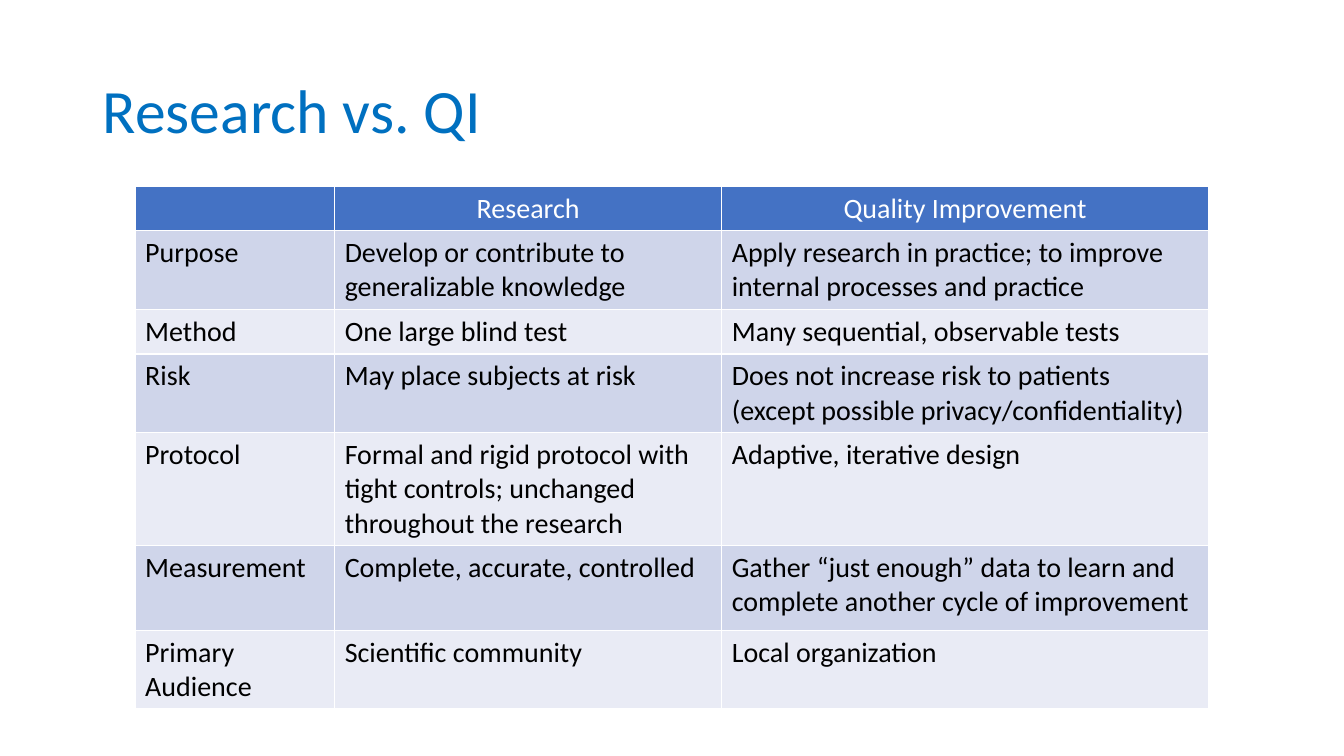
from dataclasses import dataclass

from pptx import Presentation
from pptx.dml.color import RGBColor
from pptx.enum.text import MSO_ANCHOR, MSO_AUTO_SIZE, PP_ALIGN
from pptx.slide import Slide
from pptx.table import _Cell
from pptx.text.text import TextFrame
from pptx.util import Inches, Pt

SLIDE_WIDTH = Inches(13.333)
SLIDE_HEIGHT = Inches(7.5)


@dataclass(frozen=True)
class Theme:
    font: str = "Calibri"
    title_size: int = 44
    table_size: int = 20
    title: str = "0070C0"
    header_fill: str = "4472C4"
    header_text: str = "FFFFFF"
    body_text: str = "000000"
    bands: tuple[str, str] = ("CFD5EA", "E9EBF5")


@dataclass(frozen=True)
class Box:
    """A place on the slide, in inches."""
    left: float
    top: float
    width: float
    height: float


@dataclass(frozen=True)
class Comparison:
    """One table row; lines is the number of text lines it holds."""
    topic: str
    research: str
    improvement: str
    lines: int = 1
    extra_height: float = 0

    @property
    def height(self) -> float:
        return CELL_PADDING + self.lines * LINE_HEIGHT + self.extra_height


THEME = Theme()
TITLE_BOX = Box(0.92, 0.4, 11.5, 1.45)
TABLE_LEFT, TABLE_TOP = 1.34, 1.85
COLUMN_WIDTHS = (1.98, 3.84, 4.83)
CELL_PADDING, LINE_HEIGHT = 0.1, 0.34

ROWS = (
    Comparison("", "Research", "Quality Improvement"),
    Comparison("Purpose", "Develop or contribute to generalizable knowledge",
               "Apply research in practice; to improve internal processes and practice", 2),
    Comparison("Method", "One large blind test", "Many sequential, observable tests"),
    Comparison("Risk", "May place subjects at risk",
               "Does not increase risk to patients (except possible privacy/confidentiality)", 2),
    Comparison("Protocol",
               "Formal and rigid protocol with tight controls; unchanged throughout the research",
               "Adaptive, iterative design", 3),
    Comparison("Measurement", "Complete, accurate, controlled",
               "Gather “just enough” data to learn and complete another cycle of improvement",
               2, extra_height=0.06),
    Comparison("Primary Audience", "Scientific community", "Local organization", 2),
)


def format_text(text_frame: TextFrame, size: int, color: str, alignment: PP_ALIGN) -> None:
    for paragraph in text_frame.paragraphs:
        paragraph.alignment = alignment
        for run in paragraph.runs:
            run.font.name = THEME.font
            run.font.size = Pt(size)
            run.font.bold = False
            run.font.color.rgb = RGBColor.from_string(color)


def add_title(slide: Slide, text: str, box: Box) -> None:
    title = slide.shapes.title
    title.left, title.top = Inches(box.left), Inches(box.top)
    title.width, title.height = Inches(box.width), Inches(box.height)
    text_frame = title.text_frame
    text_frame.text = text
    text_frame.word_wrap = True
    text_frame.auto_size = MSO_AUTO_SIZE.NONE
    text_frame.vertical_anchor = MSO_ANCHOR.MIDDLE
    text_frame.paragraphs[0].line_spacing = 0.9
    format_text(text_frame, THEME.title_size, THEME.title, PP_ALIGN.LEFT)


def fill_cell(cell: _Cell, text: str, row_index: int) -> None:
    is_header = row_index == 0
    fill = THEME.header_fill if is_header else THEME.bands[(row_index - 1) % 2]
    color = THEME.header_text if is_header else THEME.body_text
    alignment = PP_ALIGN.CENTER if is_header else PP_ALIGN.LEFT
    cell.fill.solid()
    cell.fill.fore_color.rgb = RGBColor.from_string(fill)
    cell.text_frame.text = text
    format_text(cell.text_frame, THEME.table_size, color, alignment)


def add_comparison_table(slide: Slide, rows: tuple[Comparison, ...]) -> None:
    # White cell borders come from the default table style
    table = slide.shapes.add_table(
        len(rows), len(COLUMN_WIDTHS), Inches(TABLE_LEFT), Inches(TABLE_TOP),
        Inches(sum(COLUMN_WIDTHS)), Inches(sum(row.height for row in rows)),
    ).table
    for column, width in zip(table.columns, COLUMN_WIDTHS):
        column.width = Inches(width)
    for row_index, row in enumerate(rows):
        table.rows[row_index].height = Inches(row.height)
        for column_index, text in enumerate((row.topic, row.research, row.improvement)):
            fill_cell(table.cell(row_index, column_index), text, row_index)


def main() -> None:
    presentation = Presentation()
    presentation.slide_width = SLIDE_WIDTH
    presentation.slide_height = SLIDE_HEIGHT
    title_only = presentation.slide_layouts.get_by_name("Title Only")
    slide = presentation.slides.add_slide(title_only)

    # Heading
    add_title(slide, "Research vs. QI", TITLE_BOX)

    # Comparison
    add_comparison_table(slide, ROWS)

    presentation.save("out.pptx")


if __name__ == "__main__":
    main()
